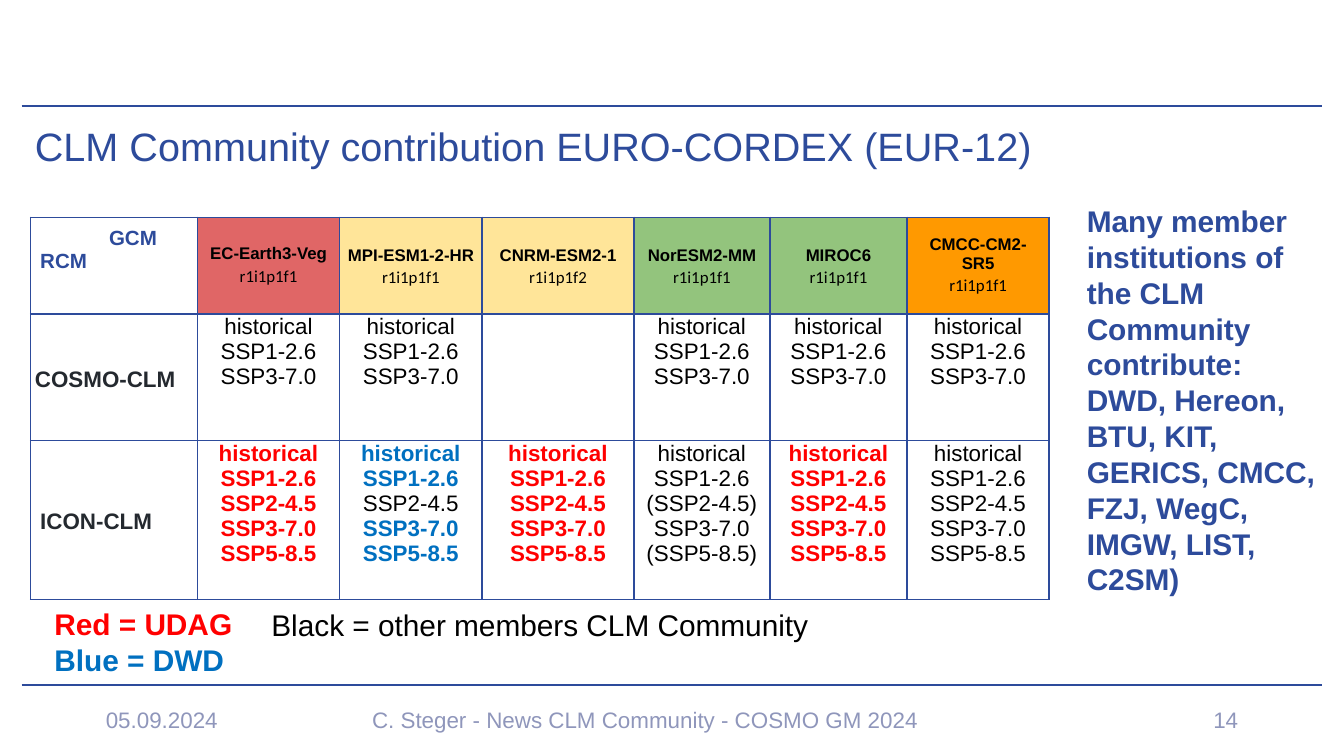
from dataclasses import dataclass

from lxml.etree import SubElement
from pptx import Presentation
from pptx.dml.color import RGBColor
from pptx.enum.shapes import MSO_CONNECTOR as Connector
from pptx.enum.text import MSO_ANCHOR as Anchor, PP_ALIGN as Align
from pptx.oxml.ns import qn
from pptx.util import Cm, Pt


@dataclass(frozen=True)
class Theme:
    font: str = "Arial"
    run_font: str = "Calibri"
    blue: str = "2D4B9B"
    footer: str = "8F96BB"
    black: str = "000000"
    dark: str = "24292F"
    white: str = "FFFFFF"
    udag: str = "FF0000"
    dwd: str = "0070C0"
    title_size: float = 21.2
    note_size: float = 16
    body_size: float = 12
    corner_size: float = 11
    model_size: float = 9


THEME = Theme()


@dataclass(frozen=True)
class Line:
    text: str
    size: float = THEME.body_size
    color: str = THEME.black
    bold: bool = False
    font: str = THEME.font
    align: Align = Align.LEFT
    spacing: float = 1.0
    indent: float = 0


@dataclass(frozen=True)
class Box:
    left: float
    top: float
    width: float
    height: float
    lines: tuple[Line, ...]
    anchor: Anchor = Anchor.TOP


@dataclass(frozen=True)
class Model:
    """One driving model: its table column and both rows of scenarios."""
    name: str
    member: str
    fill: str
    width: float
    inset: float = 0.18
    spacing: float = 1.15
    cosmo: bool = True
    icon_color: str = THEME.black
    black_scenarios: tuple[str, ...] = ()
    bracketed: tuple[str, ...] = ()


COSMO_SCENARIOS = ("historical", "SSP1-2.6", "SSP3-7.0")
ICON_SCENARIOS = ("historical", "SSP1-2.6", "SSP2-4.5", "SSP3-7.0", "SSP5-8.5")
MODELS = (
    Model("EC-Earth3-Veg", "r1i1p1f1", "E06666", 2.69, spacing=1.0, icon_color=THEME.udag),
    Model("MPI-ESM1-2-HR", "r1i1p1f1", "FFE599", 2.69, inset=0.08,
          icon_color=THEME.dwd, black_scenarios=("SSP2-4.5",)),
    Model("CNRM-ESM2-1", "r1i1p1f2", "FFE599", 2.87, cosmo=False, icon_color=THEME.udag),
    Model("NorESM2-MM", "r1i1p1f1", "93C47D", 2.57, inset=0.05,
          bracketed=("SSP2-4.5", "SSP5-8.5")),
    Model("MIROC6", "r1i1p1f1", "93C47D", 2.59, icon_color=THEME.udag),
    Model("CMCC-CM2-SR5", "r1i1p1f1", "FF9900", 2.69, spacing=1.0),
)
LABEL_WIDTH = 3.15
ROW_HEIGHTS = (1.83, 2.39, 3.0)


def footer_line(text: str, align: Align) -> Line:
    return Line(text, color=THEME.footer, align=align)


def note_line(text: str, color: str) -> Line:
    return Line(text, THEME.note_size, color, bold=True)


TITLE = Box(0.41, 2.16, 19.46, 1.3, (
    Line("CLM Community contribution EURO-CORDEX (EUR-12)",
         THEME.title_size, THEME.blue, spacing=0.9),), Anchor.MIDDLE)
BOXES = (
    TITLE,
    Box(20.29, 3.71, 4.83, 7.77, (
        note_line("Many member institutions of the CLM Community contribute:", THEME.blue),
        note_line("DWD, Hereon, BTU, KIT, GERICS, CMCC, FZJ, WegC, IMGW, LIST, C2SM)",
                  THEME.blue))),
    Box(0.78, 11.33, 10.87, 2.31, (
        note_line("Red = UDAG", THEME.udag), note_line("Blue = DWD", THEME.dwd))),
    Box(4.88, 11.35, 10.87, 0.94, (
        Line("Black = other members CLM Community", THEME.note_size),)),
    Box(1.75, 13.23, 4.01, 0.76, (footer_line("05.09.2024", Align.LEFT),), Anchor.MIDDLE),
    Box(6.63, 13.23, 11.13, 0.76, (
        footer_line("C. Steger - News CLM Community - COSMO GM 2024", Align.CENTER),),
        Anchor.MIDDLE),
    Box(17.93, 13.23, 5.72, 0.76, (footer_line("14", Align.RIGHT),), Anchor.MIDDLE),
)


def write_lines(frame, lines: tuple[Line, ...]) -> None:
    for index, line in enumerate(lines):
        paragraph = frame.paragraphs[0] if index == 0 else frame.add_paragraph()
        paragraph.alignment = line.align
        paragraph.line_spacing = line.spacing
        if line.indent:
            paragraph._p.get_or_add_pPr().set("indent", str(Cm(line.indent)))
        run = paragraph.add_run()
        run.text = line.text
        run.font.name = line.font
        run.font.size = Pt(line.size)
        run.font.bold = line.bold
        run.font.color.rgb = RGBColor.from_string(line.color)


def add_box(slide, box: Box) -> None:
    shape = slide.shapes.add_textbox(Cm(box.left), Cm(box.top), Cm(box.width), Cm(box.height))
    frame = shape.text_frame
    frame.word_wrap = True
    frame.vertical_anchor = box.anchor
    write_lines(frame, box.lines)


def add_rule(slide, top: float) -> None:
    rule = slide.shapes.add_connector(
        Connector.STRAIGHT, Cm(0.41), Cm(top), Cm(24.99), Cm(top))
    rule.line.color.rgb = RGBColor.from_string(THEME.blue)
    rule.line.width = Pt(1)
    SubElement(rule._element.spPr, qn("a:effectLst"))


def fill_cell(cell, lines: tuple[Line, ...] = (), fill: str = THEME.white,
              inset: float = 0, anchor: Anchor = Anchor.TOP) -> None:
    properties = cell._tc.get_or_add_tcPr()
    for side in ("lnL", "lnR", "lnT", "lnB"):
        border = SubElement(properties, qn(f"a:{side}"), w=str(Pt(1)))
        SubElement(SubElement(border, qn("a:solidFill")), qn("a:srgbClr"), val=THEME.blue)
    cell.fill.solid()
    cell.fill.fore_color.rgb = RGBColor.from_string(fill)
    cell.margin_left = cell.margin_right = cell.margin_top = cell.margin_bottom = Cm(inset)
    cell.vertical_anchor = anchor
    write_lines(cell.text_frame, lines)


def header_lines(model: Model) -> tuple[Line, ...]:
    return (
        Line(model.name, THEME.model_size, bold=True, align=Align.CENTER, spacing=model.spacing),
        Line(model.member, THEME.model_size, font=THEME.run_font, align=Align.CENTER,
             spacing=1.15),
    )


def icon_line(model: Model, scenario: str) -> Line:
    color = THEME.black if scenario in model.black_scenarios else model.icon_color
    text = f"({scenario})" if scenario in model.bracketed else scenario
    return Line(text, color=color, bold=color != THEME.black, align=Align.CENTER)


def add_simulation_table(slide) -> None:
    widths = (LABEL_WIDTH, *(model.width for model in MODELS))
    table = slide.shapes.add_table(
        len(ROW_HEIGHTS), len(widths), Cm(0.58), Cm(4.11),
        Cm(sum(widths)), Cm(sum(ROW_HEIGHTS))).table
    table.first_row = table.horz_banding = False
    for column, width in zip(table.columns, widths):
        column.width = Cm(width)
    for row, height in zip(table.rows, ROW_HEIGHTS):
        row.height = Cm(height)

    fill_cell(table.cell(0, 0), (
        Line("GCM", THEME.corner_size, THEME.blue, bold=True, indent=1.3),
        Line("RCM", THEME.corner_size, THEME.blue, bold=True)), inset=0.18)
    for row, (name, inset) in enumerate((("COSMO-CLM", 0.08), ("ICON-CLM", 0.18)), 1):
        label = Line(name, color=THEME.dark, bold=True, spacing=1.15)
        fill_cell(table.cell(row, 0), (label,), inset=inset, anchor=Anchor.MIDDLE)

    for column, model in enumerate(MODELS, 1):
        fill_cell(table.cell(0, column), header_lines(model), model.fill,
                  model.inset, Anchor.MIDDLE)
        scenarios = COSMO_SCENARIOS if model.cosmo else ()
        fill_cell(table.cell(1, column),
                  tuple(Line(text, align=Align.CENTER) for text in scenarios))
        fill_cell(table.cell(2, column),
                  tuple(icon_line(model, scenario) for scenario in ICON_SCENARIOS))


def main() -> None:
    presentation = Presentation()
    presentation.slide_width = Cm(25.4)
    presentation.slide_height = Cm(14.29)
    slide = presentation.slides.add_slide(presentation.slide_layouts[6])
    for top in (2.01, 12.95):
        add_rule(slide, top)
    add_simulation_table(slide)
    for box in BOXES:
        add_box(slide, box)
    presentation.save("out.pptx")


if __name__ == "__main__":
    main()
